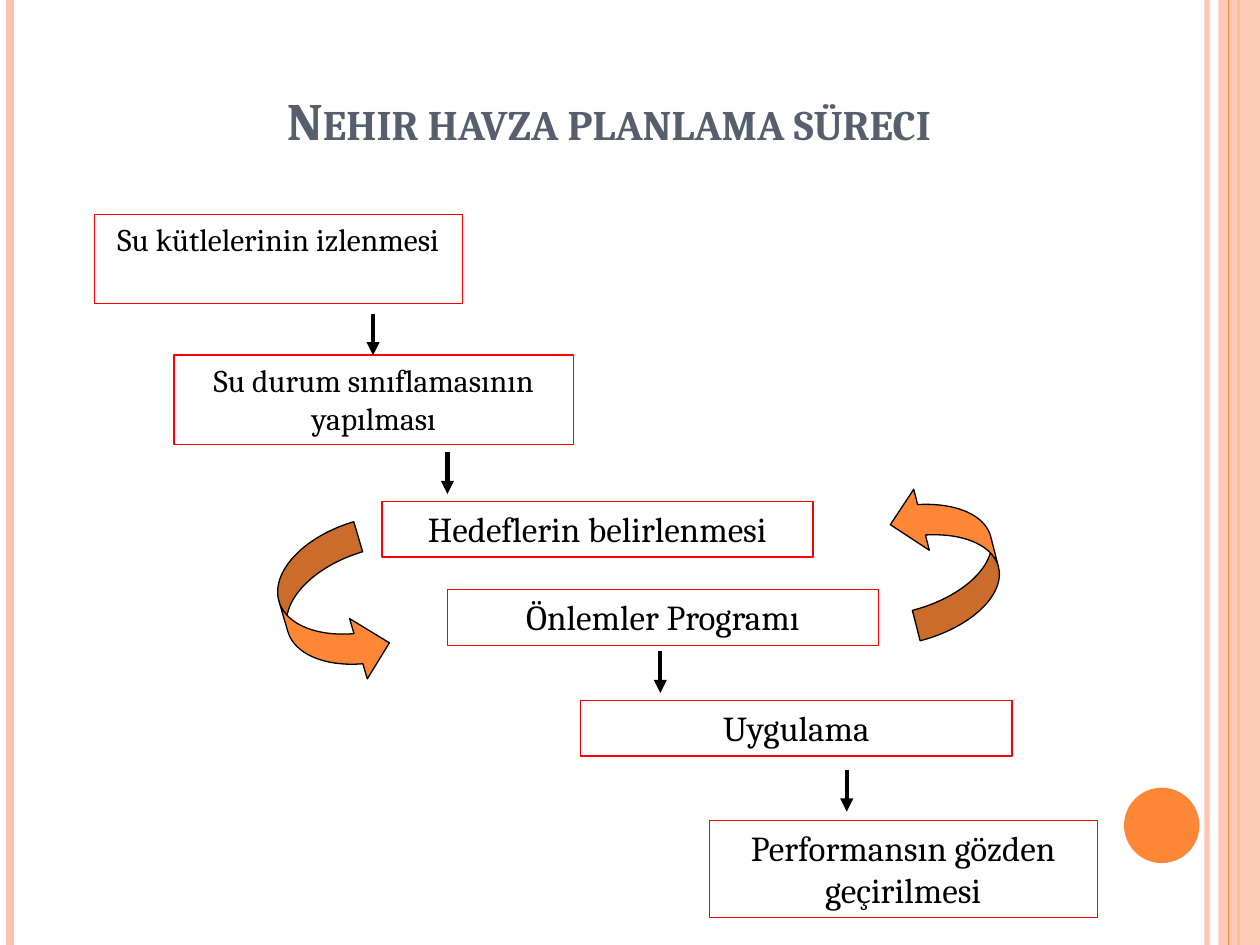
"""Build the river basin planning process slide."""
from pptx import Presentation
from pptx import util as u
from pptx.dml import color
from pptx.enum import shapes, text
from pptx.oxml import ns, xmlchemy as xml

Cm, Pt = u.Cm, u.Pt
KIND = shapes.MSO_SHAPE
WIDE, HIGH = 25.4, 19.05


def hue(code):
    return color.RGBColor.from_string(code)


def write(frame, words, size=20, ink="000000", bold=False, small=False, anchor="TOP"):
    frame.word_wrap = True
    frame.auto_size = text.MSO_AUTO_SIZE.NONE
    frame.vertical_anchor = getattr(text.MSO_ANCHOR, anchor)
    para = frame.paragraphs[0]
    para.alignment = text.PP_ALIGN.CENTER
    para.space_before = Pt(0)
    run = para.add_run()
    run.text = words
    font = run.font
    font.name, font.size, font.bold = "Cambria", Pt(size), bold
    font.color.rgb = hue(ink)
    if small:
        run._r.get_or_add_rPr().set("cap", "small")


def fade(fill, share):
    code = fill._xPr.find(".//" + ns.qn("a:srgbClr"))
    alpha = xml.OxmlElement("a:alpha")
    alpha.set("val", str(share * 1000))
    code.append(alpha)


class Deck:
    accent, pale, red, black = "FE8637", "FEC3AE", "FF0000", "000000"

    def __init__(self):
        self.show = Presentation()
        self.show.slide_width, self.show.slide_height = Cm(WIDE), Cm(HIGH)
        self.slide = self.show.slides.add_slide(self.show.slide_layouts[5])

    def title(self, words, *area):
        head = self.slide.shapes.title
        head.left, head.top, head.width, head.height = map(Cm, area)
        write(head.text_frame, words, 30, "575F6D", True, True, "BOTTOM")

    def shape(self, kind, area, fill=None, line=None):
        item = self.slide.shapes.add_shape(kind, *map(Cm, area))
        item.shadow.inherit = False
        if fill:
            item.fill.solid()
            item.fill.fore_color.rgb = hue(fill)
        else:
            item.fill.background()
        if line:
            item.line.color.rgb = hue(line)
            item.line.width = Pt(0.75)
        else:
            item.line.fill.background()
        return item

    def line(self, x, top, end, ink, width):
        item = self.slide.shapes.add_connector(
            shapes.MSO_CONNECTOR.STRAIGHT, Cm(x), Cm(top), Cm(x), Cm(end))
        item.line.color.rgb = hue(ink)
        item.line.width = Pt(width)
        item._element.spPr.append(xml.OxmlElement("a:effectLst"))
        return item

    def arrow(self, x, top):
        item = self.line(x, top, top + 0.84, self.black, 2.5)
        tip = xml.OxmlElement("a:tailEnd")
        tip.set("type", "triangle")
        item.line._get_or_add_ln().append(tip)

    def box(self, words, size, *area):
        item = self.shape(KIND.RECTANGLE, area, line=self.red)
        write(item.text_frame, words, size)

    def loop(self, turn, flip, *area):
        item = self.shape(KIND.CURVED_RIGHT_ARROW, area, self.accent, self.black)
        for spot, part in enumerate((0.333, 0.667, 0.333)):
            item.adjustments[spot] = part
        item.rotation = turn
        if flip:
            for side in ("flipH", "flipV"):
                item._element.spPr.xfrm.set(side, "1")

    def frame(self):
        edge = self.line(24.33, 0, HIGH, self.pale, 3)
        fade(edge.line.fill, 93)
        self.line(0.2, 0, HIGH, self.pale, 4.5)
        self.line(24.97, 0, HIGH, self.accent, 1.5)
        band = self.shape(KIND.RECTANGLE, (24.56, 0, 0.84, HIGH), self.pale)
        fade(band.fill, 87)
        self.line(24.77, 0, HIGH, self.accent, 0.75)
        self.shape(KIND.OVAL, (22.66, 15.88, 1.52, 1.52), self.accent)


def main():
    deck = Deck()
    deck.frame()
    deck.title("Nehir havza planlama süreci", 1.9, 0, 20.75, 3.18)
    steps = [
        ("Su kütlelerinin izlenmesi", 18, 1.9, 4.32, 7.42, 1.8),
        ("Su durum sınıflamasının yapılması", 18, 3.51, 7.16, 8.05, 1.8),
        ("Hedeflerin belirlenmesi", 20, 7.7, 10.11, 8.69, 1.12),
        ("Önlemler Programı", 20, 9.02, 11.89, 8.69, 1.12),
        ("Uygulama", 20, 11.71, 14.12, 8.69, 1.12),
        ("Performansın gözden geçirilmesi", 20, 14.3, 16.54, 7.82, 1.96),
    ]
    for step in steps:
        deck.box(*step)
    for x, top in ((7.52, 6.32), (9.02, 9.12), (13.31, 13.13), (17.07, 15.52)):
        deck.arrow(x, top)
    deck.loop(343.6, False, 5.72, 10.72, 1.9, 3.18)
    deck.loop(345.6, True, 18.14, 9.68, 1.9, 3.05)
    deck.show.save("out.pptx")


if __name__ == "__main__":
    main()
